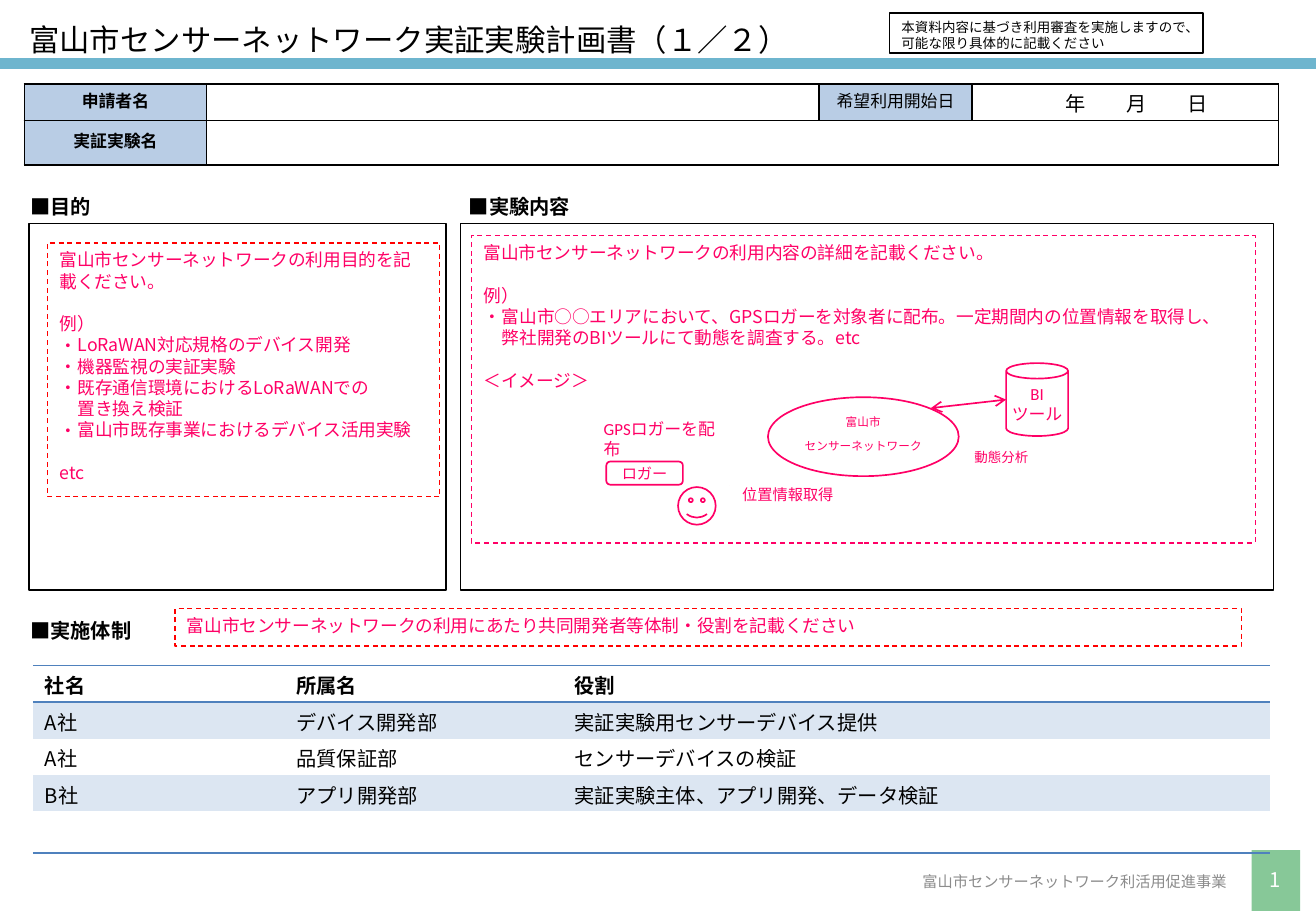
import pptx
import pptx.util
import pptx.dml.color
import pptx.enum.dml
import pptx.enum.shapes
import pptx.enum.text
import pptx.oxml.ns
import lxml.etree

Inches, Pt = pptx.util.Inches, pptx.util.Pt
SHAPE = pptx.enum.shapes.MSO_SHAPE
ALIGN = pptx.enum.text.PP_ALIGN
ANCHOR = pptx.enum.text.MSO_ANCHOR
qn = pptx.oxml.ns.qn
GOTHIC, BLACK, PINK, RED = "Noto Sans CJK JP", "000000", "FF0066", "FF0000"
LABEL, STRIPE, BLUE = "B9CDE5", "DCE6F2", "4F81BD"


def color(hex_string):
    return pptx.dml.color.RGBColor.from_string(hex_string)


def element(parent, tag, **attributes):
    return lxml.etree.SubElement(parent, qn(tag), **attributes)


class PlanSlide:
    """Holds the slide, its default type style and a method per kind of element."""

    def __init__(self, deck):
        self.slide = deck.slides.add_slide(deck.slide_layouts[3])
        self.shapes = self.slide.shapes
        self.leading = 1.2

    def paragraph(self, para, text, size, ink=BLACK, bold=False, font=GOTHIC,
                  align=ALIGN.LEFT, before=0, tabs=(), raised=False):
        bulleted = text.startswith("・")
        para.text = text[1:] if bulleted else text
        para.alignment = align
        para.line_spacing = Pt(round(size * self.leading, 1))
        para.space_before = Pt(before)
        props = para._p.get_or_add_pPr()
        hang = Inches(0.15) if bulleted else 0
        props.set("marL", str(hang))
        props.set("indent", str(-hang))
        if bulleted:
            element(props, "a:buFont", typeface=font)
            element(props, "a:buChar", char="・")
        else:
            element(props, "a:buNone")
        if tabs:
            stops = element(props, "a:tabLst")
            for stop in tabs:
                element(stops, "a:tab", pos=str(Inches(stop)), algn="l")
        para.font.size, para.font.bold, para.font.name = Pt(size), bold, font
        para.font.color.rgb = color(ink)
        defaults = props.find(qn("a:defRPr"))
        element(defaults, "a:ea", typeface=GOTHIC)
        if raised:
            defaults.set("baseline", "30000")

    def set_text(self, shape, lines, size, anchor=ANCHOR.TOP, wrap=True, margins=None, **style):
        frame = shape.text_frame
        frame.auto_size = pptx.enum.text.MSO_AUTO_SIZE.NONE
        frame.word_wrap, frame.vertical_anchor = wrap, anchor
        if margins:
            (frame.margin_left, frame.margin_top,
             frame.margin_right, frame.margin_bottom) = map(Inches, margins)
        gap = 0
        first = True
        for line in lines:
            if line is None:
                gap = size * self.leading
                continue
            para = frame.paragraphs[0] if first else frame.add_paragraph()
            self.paragraph(para, line, size, before=gap, **style)
            first, gap = False, 0

    def outline(self, shape, ink, width=1, dashed=False):
        shape.line.color.rgb, shape.line.width = color(ink), Pt(width)
        if dashed:
            shape.line.dash_style = pptx.enum.dml.MSO_LINE.DASH

    def text(self, box, lines, size, **style):
        self.set_text(self.shapes.add_textbox(*map(Inches, box)), lines, size, **style)

    def placeholder(self, index, box, lines, size, border=None, **style):
        holder = self.slide.placeholders[index]
        holder.left, holder.top, holder.width, holder.height = map(Inches, box)
        if border:
            self.outline(holder, border, 0.75, dashed=True)
        self.set_text(holder, lines, size, **style)

    def shape(self, kind, box, border=None, fill=None, width=1, dashed=False):
        drawn = self.shapes.add_shape(kind, *map(Inches, box))
        drawn.shadow.inherit = False
        if fill:
            drawn.fill.solid()
            drawn.fill.fore_color.rgb = color(fill)
        else:
            drawn.fill.background()
        if border:
            self.outline(drawn, border, width, dashed)
        else:
            drawn.line.fill.background()
        return drawn

    def line(self, start, end, ink, width, arrows=False):
        drawn = self.shapes.add_connector(
            pptx.enum.shapes.MSO_CONNECTOR.STRAIGHT, *map(Inches, start + end))
        self.outline(drawn, ink, width)
        if arrows:
            for tag in ("a:headEnd", "a:tailEnd"):
                element(drawn.line._get_or_add_ln(), tag, type="arrow")
        element(drawn._element.spPr, "a:effectLst")

    def table(self, corner, widths, heights):
        size = (sum(widths), sum(heights))
        grid = self.shapes.add_table(len(heights), len(widths),
                                     *map(Inches, corner + size)).table
        grid.first_row = grid.horz_banding = False
        for column, width in zip(grid.columns, widths):
            column.width = Inches(width)
        for row, height in zip(grid.rows, heights):
            row.height = Inches(height)
        return grid

    def cell(self, cell, text, size, fill=None, borders="", border_ink=BLACK,
             anchor=ANCHOR.MIDDLE, left=0.1, drop=0, **style):
        cell.vertical_anchor = anchor
        cell.margin_left = Inches(left)
        cell.margin_top, cell.margin_bottom = Inches(0.05 + drop), Inches(0.05 - drop)
        self.paragraph(cell.text_frame.paragraphs[0], text, size, **style)
        props = cell._tc.get_or_add_tcPr()
        for side in "LRTB":
            edge = element(props, "a:ln" + side, w=str(Pt(1)))
            if side in borders:
                element(element(edge, "a:solidFill"), "a:srgbClr", val=border_ink)
            else:
                element(edge, "a:noFill")
        if fill:
            cell.fill.solid()
            cell.fill.fore_color.rgb = color(fill)
        else:
            cell.fill.background()

    def radio_waves(self, ink, count=4, steps=12, half=0.015):
        builder = None
        for n in range(count):
            start = (5.93 + 0.033 * n, 3.805 - 0.052 * n)
            bend = (5.98 + 0.065 * n, 3.815 - 0.028 * n)
            end = (5.965 + 0.057 * n, 3.865)
            outer, inner = [], []
            for t in (step / steps for step in range(steps + 1)):
                x, y = ((1 - t) ** 2 * a + 2 * t * (1 - t) * b + t * t * c
                        for a, b, c in zip(start, bend, end))
                dx, dy = ((1 - t) * (b - a) + t * (c - b)
                          for a, b, c in zip(start, bend, end))
                reach = half / (dx * dx + dy * dy) ** 0.5
                outer.append((x + dy * reach, y - dx * reach))
                inner.append((x - dy * reach, y + dx * reach))
            points = outer + inner[::-1]
            if builder is None:
                builder = self.shapes.build_freeform(*points[0], scale=Inches(1))
            else:
                builder.move_to(*points[0])
            builder.add_line_segments(points[1:], close=True)
        waves = builder.convert_to_shape()
        waves.shadow.inherit = False
        waves.fill.solid()
        waves.fill.fore_color.rgb = color(ink)
        waves.line.fill.background()


def main():
    deck = pptx.Presentation()
    deck.slide_width, deck.slide_height = Inches(10.83), Inches(7.5)
    plan = PlanSlide(deck)
    middle, center = ANCHOR.MIDDLE, ALIGN.CENTER

    plan.line((0, 0.52), (10.83, 0.52), "6EB5CE", 6.5)
    plan.shape(SHAPE.RECTANGLE, (10.3, 7, 0.4, 0.5), fill="87C898")
    plan.placeholder(0, (0.14, 0.12, 6.51, 0.4), ["富山市センサーネットワーク実証実験計画書（１／２）"],
                     18, anchor=middle, wrap=False)
    note = plan.shape(SHAPE.RECTANGLE, (7.32, 0.11, 2.58, 0.33), BLACK)
    plan.set_text(note, ["本資料内容に基づき利用審査を実施しますので、可能な限り具体的に記載ください"], 8,
                  anchor=middle, margins=(0.1, 0.08, 0.1, 0.05))

    applicant = plan.table((0.2, 0.69), (1.5, 5.04, 1.26, 2.52), (0.3,))
    experiment = plan.table((0.2, 0.99), (1.5, 8.82), (0.37,))
    for cell, text, bold in ((applicant.cell(0, 0), "申請者名", True),
                             (applicant.cell(0, 2), "希望利用開始日", False),
                             (experiment.cell(0, 0), "実証実験名", True)):
        plan.cell(cell, text, 10, LABEL, "LRTB", bold=bold, align=center)
    for cell in (applicant.cell(0, 1), experiment.cell(0, 1)):
        plan.cell(cell, "", 10, "FFFFFF", "LRTB")
    plan.cell(applicant.cell(0, 3), "年\t月\t日", 12, "FFFFFF", "LRTB",
              left=0.77, drop=0.03, tabs=(0.5, 1))

    for left, width in ((0.24, 3.43), (3.79, 6.69)):
        plan.shape(SHAPE.RECTANGLE, (left, 1.84, width, 3.02), BLACK)
    for heading, left, top, width in (("■目的", 0.15, 1.55, 0.71), ("■実験内容", 3.76, 1.55, 1.04),
                                      ("■実施体制", 0.15, 5.04, 1.04)):
        plan.text((left, top, width, 0.3), [heading], 12, bold=True, wrap=False)

    plan.placeholder(1, (0.39, 2, 3.23, 2.09), [
        "富山市センサーネットワークの利用目的を記載ください。", None, "例）",
        "・LoRaWAN対応規格のデバイス開発", "・機器監視の実証実験",
        "・既存通信環境におけるLoRaWANでの\v置き換え検証",
        "・富山市既存事業におけるデバイス活用実験", None, "etc"], 10.5, border=RED, ink=PINK)
    plan.placeholder(2, (3.88, 1.94, 6.45, 2.53), [
        "富山市センサーネットワークの利用内容の詳細を記載ください。", None, "例）",
        "・富山市○○エリアにおいて、GPSロガーを対象者に配布。一定期間内の位置情報を取得し、"
        "\v弊社開発のBIツールにて動態を調査する。etc", None, "＜イメージ＞"],
        10.5, border=PINK, ink=PINK)
    team = plan.shape(SHAPE.RECTANGLE, (1.44, 5.01, 8.78, 0.31), RED, width=0.75, dashed=True)
    plan.set_text(team, ["富山市センサーネットワークの利用にあたり共同開発者等体制・役割を記載ください"], 10.5, ink=PINK)

    sketch = dict(ink=PINK, font="Calibri")
    network = plan.shape(SHAPE.OVAL, (6.32, 3.27, 1.57, 0.65), PINK)
    plan.set_text(network, ["富山市", "センサーネットワーク"], 12, anchor=middle, align=center,
                  margins=(0, 0.05, 0, 0.05), raised=True, **sketch)
    tool = plan.shape(SHAPE.CAN, (8.28, 2.99, 0.51, 0.6), PINK)
    plan.set_text(tool, ["BI", "ツール"], 10, anchor=middle, align=center, wrap=False, **sketch)
    plan.line((7.66, 3.36), (8.28, 3.29), PINK, 1, arrows=True)
    plan.shape(SHAPE.SMILEY_FACE, (5.58, 4.01, 0.31, 0.31), PINK)
    logger = plan.shape(SHAPE.ROUNDED_RECTANGLE, (4.99, 3.8, 0.63, 0.19), PINK)
    plan.set_text(logger, ["ロガー"], 9, anchor=middle, align=center, **sketch)
    plan.radio_waves(PINK)
    for caption, box, size, wrap in (("GPSロガーを配布", (4.87, 3.4, 1.21, 0.27), 10, True),
                                     ("動態分析", (7.92, 3.65, 0.65, 0.24), 8, False),
                                     ("位置情報取得", (6.01, 3.95, 0.96, 0.25), 9, False)):
        plan.text(box, [caption], size, wrap=wrap, **sketch)

    members = (("社名", "所属名", "役割"),
               ("A社", "デバイス開発部", "実証実験用センサーデバイス提供"),
               ("A社", "品質保証部", "センサーデバイスの検証"),
               ("B社", "アプリ開発部", "実証実験主体、アプリ開発、データ検証"),
               ("", "", ""))
    roster = plan.table((0.27, 5.48), (2.07, 2.29, 5.82), (0.3,) * len(members))
    edges = {0: "TB", 1: "T", len(members) - 1: "B"}
    for r, member in enumerate(members):
        for c, entry in enumerate(member):
            plan.cell(roster.cell(r, c), entry, 12, STRIPE if r % 2 else None, edges.get(r, ""),
                      BLUE, anchor=ANCHOR.TOP, drop=0.03, bold=r == 0)

    plan.text((6.81, 7.06, 3.38, 0.4), ["富山市センサーネットワーク利活用促進事業"], 9,
              ink="8C8C8C", font="Arial", align=ALIGN.RIGHT, anchor=middle)
    plan.text((10.29, 7.04, 0.4, 0.4), ["1"], 12, ink="FFFFFF", align=center,
              anchor=middle, margins=(0, 0, 0, 0))
    deck.save("out.pptx")


if __name__ == "__main__":
    main()
